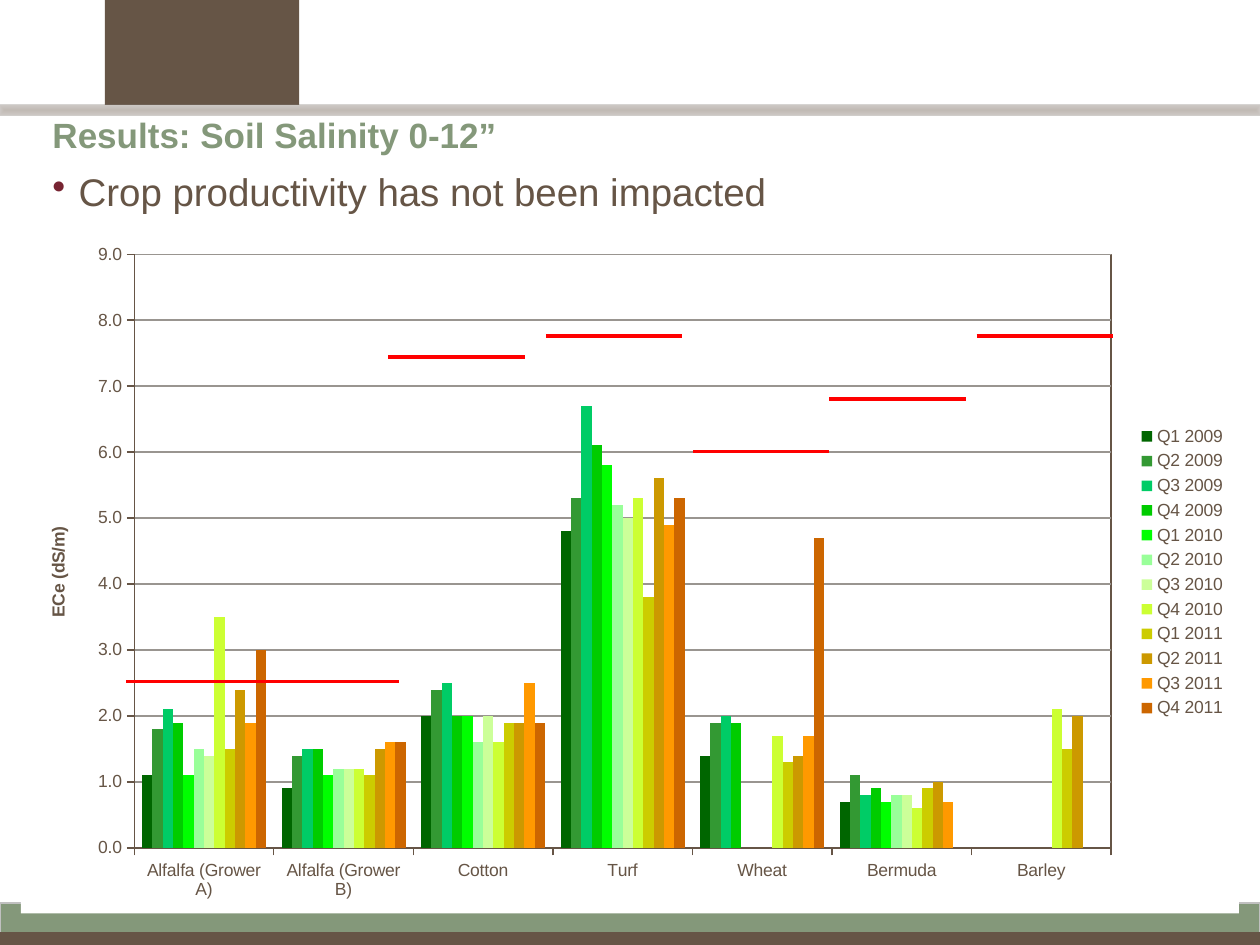
from pptx import Presentation
from pptx.chart.data import CategoryChartData
from pptx.dml.color import RGBColor
from pptx.enum import chart as ch, shapes
from pptx.oxml import parse_xml
from pptx.oxml.ns import nsdecls, qn
from pptx.util import Pt

FONT = "Arial"
COLORS = {
    "brown": "665546", "taupe": "8A8079", "sage": "84987A", "silver": "C0C0C0",
    "maroon": "772432", "red": "FF0000", "white": "FFFFFF", "grid": "999590",
}
CROPS = ["Alfalfa (Grower A)", "Alfalfa (Grower B)", "Cotton", "Turf",
         "Wheat", "Bermuda", "Barley"]
QUARTERS = [
    ("Q1 2009", "006600", [1.1, 0.9, 2, 4.8, 1.4, 0.7, None]),
    ("Q2 2009", "339933", [1.8, 1.4, 2.4, 5.3, 1.9, 1.1, None]),
    ("Q3 2009", "00CC66", [2.1, 1.5, 2.5, 6.7, 2, 0.8, None]),
    ("Q4 2009", "00CC00", [1.9, 1.5, 2, 6.1, 1.9, 0.9, None]),
    ("Q1 2010", "00FF00", [1.1, 1.1, 2, 5.8, None, 0.7, None]),
    ("Q2 2010", "99FF99", [1.5, 1.2, 1.6, 5.2, None, 0.8, None]),
    ("Q3 2010", "CCFF99", [1.4, 1.2, 2, 5, None, 0.8, None]),
    ("Q4 2010", "CCFF33", [3.5, 1.2, 1.6, 5.3, 1.7, 0.6, 2.1]),
    ("Q1 2011", "CCCC00", [1.5, 1.1, 1.9, 3.8, 1.3, 0.9, 1.5]),
    ("Q2 2011", "CC9900", [2.4, 1.5, 1.9, 5.6, 1.4, 1, 2]),
    ("Q3 2011", "FF9900", [1.9, 1.6, 2.5, 4.9, 1.7, 0.7, None]),
    ("Q4 2011", "CC6600", [3, 1.6, 1.9, 5.3, 4.7, None, None]),
]
THRESHOLD_WIDTH = 78
THRESHOLDS = [(72, 389.5), (150, 389.5), (222, 204), (312, 192),
              (396, 258), (474, 228), (558, 192)]


def rgb(name):
    return RGBColor.from_string(COLORS[name])


def add_band(s, x, y, w, h, fill, line=None):
    sp = s.shapes.add_shape(shapes.MSO_SHAPE.RECTANGLE, Pt(x), Pt(y), Pt(w), Pt(h))
    sp.shadow.inherit = False
    sp.fill.solid()
    sp.fill.fore_color.rgb = rgb(fill)
    if line:
        sp.line.color.rgb = rgb(line)
        sp.line.width = Pt(0.75)
    else:
        sp.line.fill.background()
    return sp


def fade(sp, start, end, alpha):
    stops = "".join(
        f'<a:gs pos="{pos}"><a:srgbClr val="{COLORS[name]}">'
        f'<a:alpha val="{alpha * 1000}"/></a:srgbClr></a:gs>'
        for pos, name in ((0, start), (100000, end)))
    grad = parse_xml(
        f'<a:gradFill {nsdecls("a")}><a:gsLst>{stops}</a:gsLst><a:path path="shape">'
        '<a:fillToRect l="50000" t="50000" r="50000" b="50000"/></a:path></a:gradFill>')
    spPr = sp._element.spPr
    spPr.replace(spPr.find(qn("a:solidFill")), grad)


def add_text(s, x, y, w, h, content, size, color, bold=False, bullet=None, spacing=None):
    tf = s.shapes.add_textbox(Pt(x), Pt(y), Pt(w), Pt(h)).text_frame
    tf.word_wrap = True
    tf.margin_left = tf.margin_top = tf.margin_right = tf.margin_bottom = 0
    tf.text = content
    p = tf.paragraphs[0]
    if bullet:
        pPr = p._p.get_or_add_pPr()
        pPr.set("marL", str(Pt(15)))
        pPr.set("indent", str(-Pt(15)))
        pPr.append(parse_xml(f'<a:buClr {nsdecls("a")}><a:srgbClr val="{COLORS[bullet]}"/></a:buClr>'))
        pPr.append(parse_xml(f'<a:buChar {nsdecls("a")} char="•"/>'))
    if spacing:
        p.line_spacing = Pt(spacing)
    font = p.runs[0].font
    font.name, font.size, font.bold = FONT, Pt(size), bold
    font.color.rgb = rgb(color)


def area_format(line):
    outline = f'<a:solidFill><a:srgbClr val="{COLORS[line]}"/></a:solidFill>' if line else "<a:noFill/>"
    return parse_xml(
        f'<c:spPr {nsdecls("c", "a")}><a:solidFill><a:srgbClr val="{COLORS["white"]}"/>'
        f'</a:solidFill><a:ln w="9525">{outline}</a:ln></c:spPr>')


def place_plot(chart, x, y, w, h):
    plot_area = chart._chartSpace.chart.plotArea
    for old in plot_area.findall(qn("c:layout")):
        plot_area.remove(old)
    sizes = "".join(f'<c:{k} val="{v}"/>' for k, v in (("x", x), ("y", y), ("w", w), ("h", h)))
    plot_area.insert(0, parse_xml(
        f'<c:layout {nsdecls("c")}><c:manualLayout><c:layoutTarget val="inner"/>'
        f'<c:xMode val="edge"/><c:yMode val="edge"/>{sizes}</c:manualLayout></c:layout>'))
    plot_area.append(area_format("brown"))


def add_salinity_chart(s, x, y, w, h):
    data = CategoryChartData(number_format="#,##0.0")
    data.categories = CROPS
    for name, _, values in QUARTERS:
        data.add_series(name, values)
    chart = s.shapes.add_chart(ch.XL_CHART_TYPE.COLUMN_CLUSTERED,
                               Pt(x), Pt(y), Pt(w), Pt(h), data).chart
    chart.font.name, chart.font.size = FONT, Pt(10)
    chart.font.color.rgb = rgb("brown")
    chart.has_title = False
    chart.has_legend = True
    chart.legend.position = ch.XL_LEGEND_POSITION.RIGHT
    chart.legend.include_in_layout = False

    plot = chart.plots[0]
    plot.gap_width, plot.overlap = 150, 0
    plot.vary_by_categories = False
    for series, (_, color, _) in zip(plot.series, QUARTERS):
        series.format.fill.solid()
        series.format.fill.fore_color.rgb = RGBColor.from_string(color)

    for axis in (chart.category_axis, chart.value_axis):
        axis.major_tick_mark = ch.XL_TICK_MARK.OUTSIDE
        axis.format.line.color.rgb = rgb("brown")
        axis.format.line.width = Pt(0.75)
    axis.minimum_scale, axis.maximum_scale, axis.major_unit = 0, 9, 1
    axis.tick_labels.number_format = "#,##0.0"
    axis.tick_labels.number_format_is_linked = False
    axis.major_gridlines.format.line.color.rgb = rgb("grid")
    axis.major_gridlines.format.line.width = Pt(0.75)
    tf = axis.axis_title.text_frame
    tf.text = "ECe (dS/m)"
    font = tf.paragraphs[0].runs[0].font
    font.name, font.size, font.bold = FONT, Pt(10), True
    font.color.rgb = rgb("brown")

    place_plot(chart, 0.093, 0.034, 0.802, 0.87)
    chart._chartSpace.chart.addnext(area_format(None))


def add_threshold(s, x, y):
    line = s.shapes.add_connector(shapes.MSO_CONNECTOR.STRAIGHT,
                                  Pt(x), Pt(y), Pt(x + THRESHOLD_WIDTH), Pt(y))
    line.line.color.rgb = rgb("red")
    line.line.width = Pt(2)
    line._element.spPr.append(parse_xml(f'<a:effectLst {nsdecls("a")}/>'))


def main():
    prs = Presentation()
    prs.slide_width, prs.slide_height = Pt(720), Pt(540)
    s = prs.slides.add_slide(prs.slide_layouts[6])
    add_band(s, 0, 516, 720, 18, "sage", "silver")
    add_band(s, 0, 533, 720, 7, "brown", "brown")
    add_band(s, 60, 0, 111, 60, "brown")
    fade(add_band(s, 0, 60, 720, 6, "brown"), "brown", "taupe", 40)
    add_text(s, 30, 66, 264, 24, "Results: Soil Salinity 0-12”", 20, "sage",
             bold=True, spacing=23)
    add_text(s, 30, 96, 648, 39, "Crop productivity has not been impacted", 22,
             "brown", bullet="maroon")
    add_salinity_chart(s, 12, 132, 696, 390)
    for x, y in THRESHOLDS:
        add_threshold(s, x, y)
    prs.save("out.pptx")


if __name__ == "__main__":
    main()
